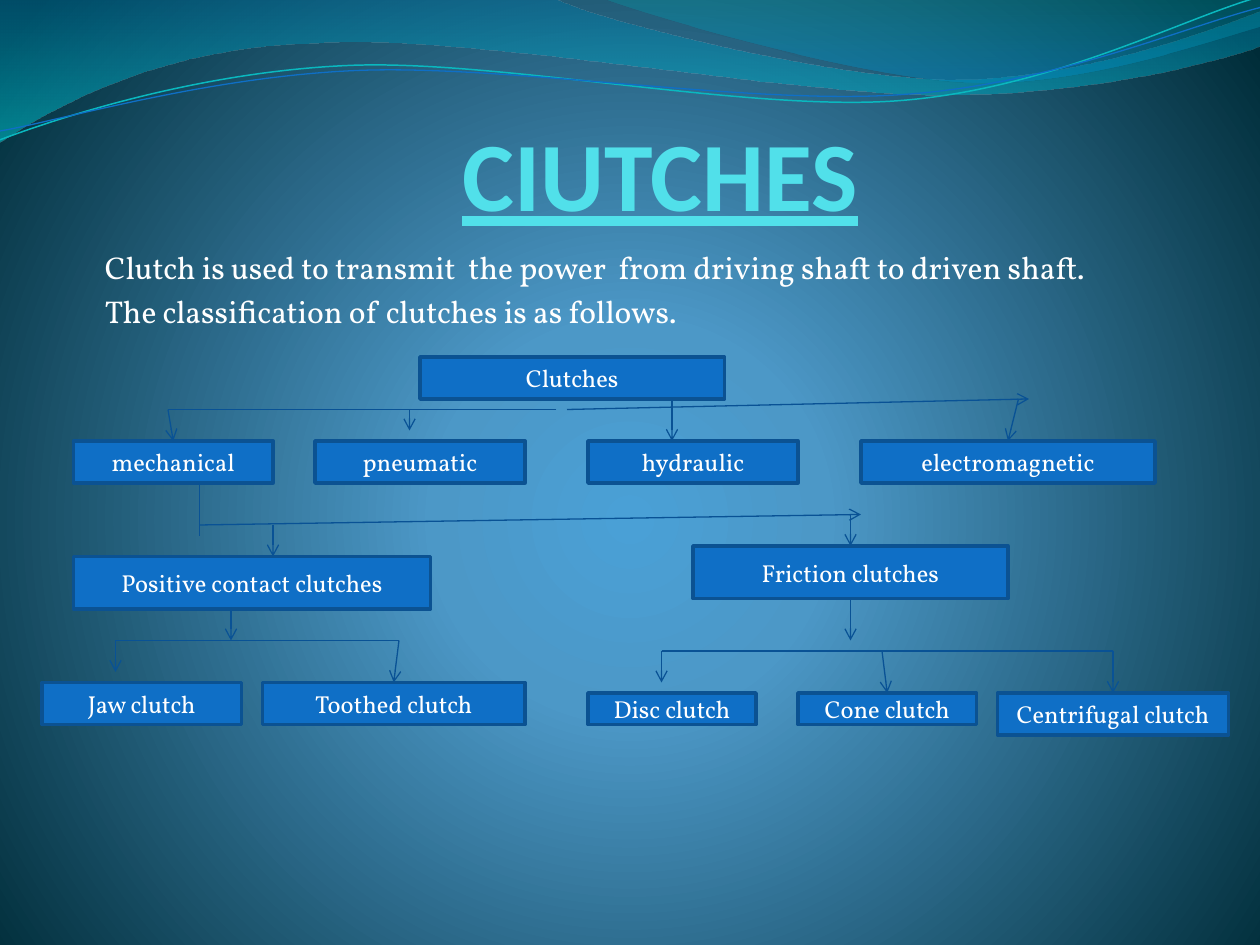
from lxml.etree import SubElement
from pptx import Presentation
from pptx.dml.color import RGBColor
from pptx.enum.shapes import MSO_CONNECTOR as Route, MSO_SHAPE as Preset
from pptx.enum.text import MSO_ANCHOR as Anchor, PP_ALIGN as Align
from pptx.oxml import parse_xml
from pptx.oxml.ns import nsdecls, qn
from pptx.util import Inches, Pt

COLUMNS, ROWS = 120, 90
CELL = Inches(10) // COLUMNS
COLORS = {
    "title": "51E0EA", "text": "FFFFFF", "node": "0F6FC6", "edge": "0B5292",
    "link": "095295", "teal": "0AB8BF", "blue": "0F6FC6",
}
BACKDROP = [(0, "4AA0D6", 100), (25, "4C98C7", 100), (100, "002C38", 100)]
CIRCLE = ('<a:path path="circle"><a:fillToRect l="10000" t="110000" '
          'r="10000" b="100000"/></a:path>')
DOWNWARD = '<a:lin ang="5400000" scaled="0"/>'

WAVES = [
    ([(0, 0), (4.4, -0.01),
      [(4.76, 0.17), (6.64, 0.63), (7.58, 0.63)],
      [(8.53, 0.63), (9.58, 0.26), (10, 0.09)], (10.01, 0.36),
      [(9.83, 0.44), (8.7, 0.76), (7.46, 0.75)],
      [(6.22, 0.75), (3.82, 0.28), (2.57, 0.34)],
      [(1.29, 0.36), (0.46, 0.83), (-0.01, 1.13)], (0, 0)],
     [(0, "0074A1", 45), (100, "00C6CF", 55)]),
    ([(4.79, -0.01),
      [(5.09, 0.11), (6.82, 0.62), (7.69, 0.65)],
      [(8.56, 0.69), (9.61, 0.32), (10, 0.21)], (10, 0), (4.79, -0.01)],
     [(0, "00A1A9", 30), (80, "008BBF", 45)]),
]
STRANDS = [
    ([(0, 1.11),
      [(0.48, 0.93), (1.58, 0.57), (2.77, 0.52)],
      [(3.95, 0.47), (5.93, 0.89), (7.13, 0.8)],
      [(8.33, 0.71), (9.38, 0.15), (9.98, -0.02)]], "teal", 0.85),
    ([(0, 1.04),
      [(0.47, 0.96), (1.64, 0.61), (2.83, 0.56)],
      [(4.03, 0.51), (5.97, 0.84), (7.17, 0.75)],
      [(8.36, 0.67), (9.41, 0.21), (10, 0.06)]], "blue", 0.75),
]
NODES = {
    "Clutches": (40, 34, 29, 4),
    "mechanical": (7, 42, 19, 4),
    "pneumatic": (30, 42, 20, 4),
    "hydraulic": (56, 42, 20, 4),
    "electromagnetic": (82, 42, 28, 4),
    "Positive contact clutches": (7, 53, 34, 5),
    "Friction clutches": (66, 52, 30, 5),
    "Jaw clutch": (4, 65, 19, 4),
    "Toothed clutch": (25, 65, 25, 4),
    "Disc clutch": (56, 66, 16, 3),
    "Cone clutch": (76, 66, 17, 3),
    "Centrifugal clutch": (95, 66, 22, 4),
}
ELBOWS = [((53, 39), (16, 39))]
RAILS = [((19, 46), (19, 51)), ((11, 61), (38, 61)), ((63, 62), (106, 62))]
ARROWS = [
    ((54, 39), (98, 38)), ((97, 38), (96, 42)), ((64, 38), (64, 42)),
    ((39, 39), (39, 41)), ((16, 39), (16.5, 42)), ((19, 50), (82, 49)),
    ((81, 49), (81, 52)), ((26, 50), (26, 53)), ((38, 61), (37.5, 65)),
    ((11, 61), (11, 64)), ((81, 57), (81, 61)), ((106, 62), (106, 66)),
    ((84, 62), (84.5, 66)), ((63, 62), (63, 65)), ((22, 58), (22, 61)),
]


def grid(*cells):
    """Turn columns and rows into slide lengths."""
    return [int(cell * CELL) for cell in cells]


def assign(target, values):
    """Set attributes from a dict of format values."""
    for name, value in values.items():
        setattr(target, name, value)


def set_gradient(fill_parent, stops, direction):
    """Replace the gradient of a parent element with the given stops."""
    marks = "".join(
        f'<a:gs pos="{place * 1000}"><a:srgbClr val="{color}">'
        f'<a:alpha val="{opacity * 1000}"/></a:srgbClr></a:gs>'
        for place, color, opacity in stops)
    gradient = parse_xml(
        f'<a:gradFill {nsdecls("a")} rotWithShape="1">'
        f'<a:gsLst>{marks}</a:gsLst>{direction}</a:gradFill>')
    fill_parent.replace(fill_parent.find(qn("a:gradFill")), gradient)


def add_outline(page, outline, closed):
    """Draw corners and cubic curves given in inches."""
    parts = [part if isinstance(part, list) else [part] for part in outline]
    first, *rest = [(round(x * 100), round(y * 100)) for part in parts for x, y in part]
    builder = page.shapes.build_freeform(*first, scale=Inches(1) / 100)
    builder.add_line_segments(rest, close=closed)
    shape = builder.convert_to_shape()
    shape.shadow.inherit = False
    segments = iter(list(shape._element.iter(qn("a:lnTo"))))
    for part in parts[1:]:
        lines = [next(segments) for _ in part]
        if len(lines) == 3:
            curve = parse_xml(f'<a:cubicBezTo {nsdecls("a")}/>')
            lines[0].addprevious(curve)
            for line in lines:
                curve.append(line[0])
                line.getparent().remove(line)
    return shape


def add_backdrop(page):
    """Paint the background and the waves along the top."""
    page.background.fill.gradient()
    set_gradient(page.background.fill._xPr, BACKDROP, CIRCLE)
    for outline, stops in WAVES:
        wave = add_outline(page, outline, True)
        wave.line.fill.background()
        wave.fill.gradient()
        set_gradient(wave.fill._xPr, stops, DOWNWARD)
    for outline, color, width in STRANDS:
        strand = add_outline(page, outline, False)
        strand.fill.background()
        strand.line.color.rgb = RGBColor.from_string(COLORS[color])
        strand.line.width = Pt(width)


def write(para, text, color, **values):
    """Write one formatted run."""
    span = para.add_run()
    span.text = text
    assign(span.font, values)
    span.font.color.rgb = RGBColor.from_string(COLORS[color])


def add_heading(page, area):
    """Place the title."""
    title = page.shapes.title
    assign(title, dict(zip(("left", "top", "width", "height"), grid(*area))))
    assign(title.text_frame, dict(
        margin_left=0, margin_top=0, margin_right=Inches(0.02), margin_bottom=0,
        vertical_anchor=Anchor.BOTTOM, word_wrap=True))
    para = title.text_frame.paragraphs[0]
    para.alignment = Align.CENTER
    write(para, "CIUTCHES", "title", name="Calibri", size=Pt(56), bold=True, underline=True)


def add_intro(page, area, lines):
    """Place the introductory sentences."""
    frame = page.shapes.add_textbox(*grid(*area)).text_frame
    assign(frame, dict(margin_left=0, margin_right=Inches(0.02), word_wrap=True))
    for index, line in enumerate(lines):
        para = frame.add_paragraph() if index else frame.paragraphs[0]
        para.space_before = Pt(3.6)
        write(para, line, "text", name="Vollkorn", size=Pt(18))


def add_node(page, label, area):
    """Place one labelled box of the tree."""
    box = page.shapes.add_shape(Preset.RECTANGLE, *grid(*area))
    box.shadow.inherit = False
    box.fill.solid()
    box.fill.fore_color.rgb = RGBColor.from_string(COLORS["node"])
    box.line.color.rgb = RGBColor.from_string(COLORS["edge"])
    box.line.width = Pt(2)
    assign(box.text_frame, dict(word_wrap=True, vertical_anchor=Anchor.MIDDLE))
    para = box.text_frame.paragraphs[0]
    para.alignment = Align.CENTER
    write(para, label, "text", name="Vollkorn", size=Pt(14))
    return box


def add_link(page, start, end, sites, route, arrow):
    """Draw a line and join it to any box whose side middle it meets."""
    link = page.shapes.add_connector(route, *grid(*start, *end))
    link.line.color.rgb = RGBColor.from_string(COLORS["link"])
    link.line.width = Pt(0.75)
    if arrow:
        SubElement(link.line._get_or_add_ln(), qn("a:tailEnd"), type="arrow")
    SubElement(link._element.spPr, qn("a:effectLst"))
    for point, join in ((start, link.begin_connect), (end, link.end_connect)):
        if point in sites:
            join(*sites[point])


def add_tree(page):
    """Build the classification tree."""
    sites = {}
    for label, area in NODES.items():
        left, top, width, height = area
        box = add_node(page, label, area)
        sites[left + width / 2, top] = (box, 0)
        sites[left + width / 2, top + height] = (box, 2)
    for links, route, arrow in ((ELBOWS, Route.ELBOW, False),
                                (RAILS, Route.STRAIGHT, False),
                                (ARROWS, Route.STRAIGHT, True)):
        for start, end in links:
            add_link(page, start, end, sites, route, arrow)


def main():
    """Build and save the slide."""
    deck = Presentation()
    deck.slide_width, deck.slide_height = grid(COLUMNS, ROWS)
    page = deck.slides.add_slide(deck.slide_layouts[5])
    add_backdrop(page)
    add_heading(page, (43, 10, 40, 12))
    add_intro(page, (10, 23, 103, 20), [
        "Clutch is used to transmit  the power  from driving shaft to driven shaft.",
        "The classification of clutches is as follows."])
    add_tree(page)
    deck.save("out.pptx")


if __name__ == "__main__":
    main()
